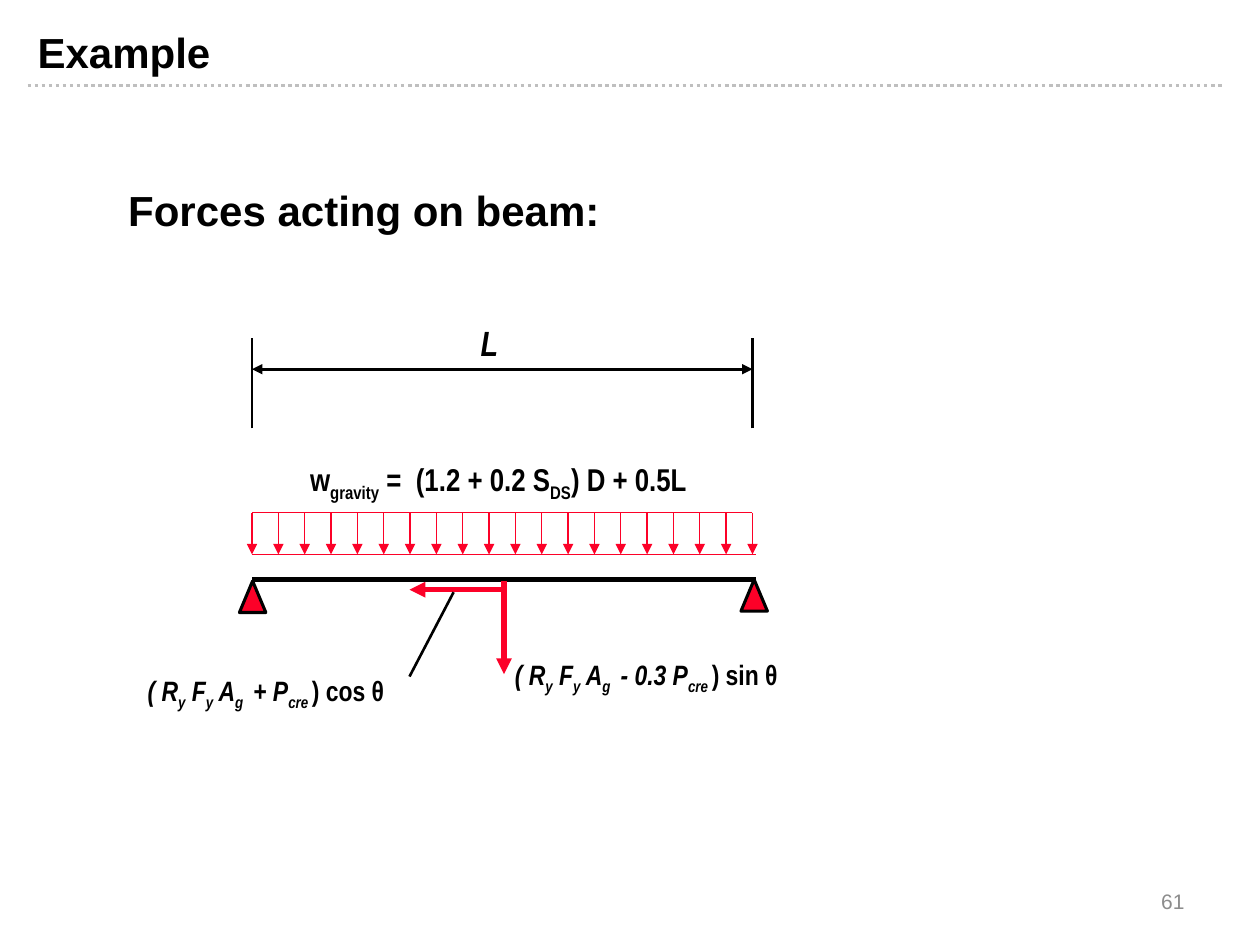
"""Build the slide showing the forces acting on a beam."""
from lxml import etree
from pptx import Presentation
from pptx.dml.color import RGBColor
from pptx.enum import dml, shapes, text
from pptx.oxml import ns
from pptx.util import Pt

THEME = {
    "black": "000000", "red": "FC0128", "rule": "BFBFBF", "number": "8C8C8C",
    "sans": "Arial", "narrow": "Arial Narrow",
    "heading": 24, "span": 20, "load": 18, "force": 16, "page": 12,
}
LEFT, MIDDLE, RIGHT, BEAM_END = 144, 288, 430, 432
LOAD_TOP, LOAD_BOTTOM, BEAM_Y = 293, 316.8, 331.2
LOAD_ARROWS = 20
BOLD = {"bold": True}
ITALIC = {"bold": True, "italic": True}
CENTER, START, END = text.PP_ALIGN.CENTER, text.PP_ALIGN.LEFT, text.PP_ALIGN.RIGHT
TOP, CENTERED = text.MSO_ANCHOR.TOP, text.MSO_ANCHOR.MIDDLE


def force_runs(term, function):
    """List the runs of one brace force component."""
    return [("( R", 0), ("y", 1), (" F", 0), ("y", 1), (" A", 0), ("g ", 1),
            (term, 0), ("cre ", 1), (f") {function} θ", 0, BOLD)]


LOAD_RUNS = [("w", 0), ("gravity", 1), (" =  (1.2 + 0.2 S", 0), ("DS", 1), (") D + 0.5L", 0)]

# box, runs, font, size, colour, style, alignment, anchor
TEXTS = [
    ((162, 259.2, 245.5, 28.8), LOAD_RUNS, "narrow", "load", "black", BOLD, CENTER, TOP),
    ((259.2, 180, 41, 31), [("L", 0)], "narrow", "span", "black", ITALIC, CENTER, TOP),
    ((264.2, 372.2, 210.2, 26.6), force_runs(" - 0.3 P", "sin"),
     "narrow", "force", "black", ITALIC, CENTER, TOP),
    ((46.8, 381.6, 210.2, 26.6), force_runs(" + P", "cos"),
     "narrow", "force", "black", ITALIC, CENTER, TOP),
    ((66.2, 102.2, 303.8, 36), [("Forces acting on beam:", 0)],
     "sans", "heading", "black", BOLD, START, TOP),
    ((14.4, 11.5, 646.6, 31.7), [("Example", 0)], "sans", "heading", "black", BOLD, START, TOP),
    ((516.2, 500.4, 167.8, 28.8), [("61", 0)], "sans", "page", "number", {}, END, CENTERED),
]

# start, end, colour, width, arrowheads
BEAM_LINES = [
    ((LEFT, BEAM_Y), (MIDDLE, BEAM_Y), "black", 3, ()),
    ((MIDDLE, BEAM_Y), (BEAM_END, BEAM_Y), "black", 3, ()),
]
SPAN_LINES = [
    ((RIGHT, 244.8), (RIGHT, 193), "black", 1.5, ()),
    ((LEFT, 244.8), (LEFT, 193), "black", 1.5, ()),
    ((LEFT, 211), (RIGHT, 211), "black", 1.5, ("headEnd", "tailEnd")),
]
FORCE_LINES = [
    ((MIDDLE, 332), (MIDDLE, 385.2), "red", 3, ("tailEnd",)),
    ((287.3, 337), (234, 337), "red", 3, ("tailEnd",)),
    ((234, 386.6), (259.2, 338.4), "black", 1.5, ()),
]
SUPPORTS = [(136.8, 332), (423.4, 331.2)]
SUPPORT_SIZE = (15.1, 18)


def colour(name):
    """Return a theme colour."""
    return RGBColor.from_string(THEME[name])


def apply(target, values):
    """Set each named attribute on the target."""
    for name, value in values.items():
        setattr(target, name, value)


def add_line(parent, start, end, line_colour, width, arrowheads):
    """Draw a straight line with optional arrowheads."""
    connector = parent.add_connector(
        shapes.MSO_CONNECTOR.STRAIGHT, *(Pt(value) for value in start + end))
    connector.line.color.rgb = colour(line_colour)
    connector.line.width = Pt(width)
    outline = connector.line._get_or_add_ln()
    for arrowhead in arrowheads:
        etree.SubElement(outline, ns.qn(f"a:{arrowhead}"), type="triangle")
    etree.SubElement(connector._element.spPr, ns.qn("a:effectLst"))
    return connector


def add_load(slide):
    """Draw the distributed load as a group of evenly spaced arrows."""
    group = slide.shapes.add_group_shape().shapes
    gap = (RIGHT - LEFT) / (LOAD_ARROWS - 1)
    for index in range(LOAD_ARROWS):
        x = LEFT + index * gap
        add_line(group, (x, LOAD_TOP), (x, LOAD_BOTTOM), "red", 0.75, ("tailEnd",))
    for y, end in ((LOAD_TOP, RIGHT), (LOAD_BOTTOM, BEAM_END)):
        add_line(group, (LEFT, y), (end, y), "red", 0.75, ())


def add_support(slide, position):
    """Draw one triangular support."""
    shape = slide.shapes.add_shape(
        shapes.MSO_SHAPE.ISOSCELES_TRIANGLE, *(Pt(value) for value in position + SUPPORT_SIZE))
    shape.shadow.inherit = False
    shape.fill.solid()
    shape.fill.fore_color.rgb = colour("red")
    shape.line.color.rgb = colour("black")
    shape.line.width = Pt(1.75)


def add_text(slide, box, runs, font, size, text_colour, style, alignment, anchor):
    """Write one paragraph whose runs may be subscripts."""
    frame = slide.shapes.add_textbox(*(Pt(value) for value in box)).text_frame
    apply(frame, {"word_wrap": True, "vertical_anchor": anchor})
    paragraph = frame.paragraphs[0]
    paragraph.alignment = alignment
    for wording, subscript, *override in runs:
        run = paragraph.add_run()
        run.text = wording
        run_style = override[0] if override else style
        apply(run.font, {"name": THEME[font], "size": Pt(THEME[size]), **run_style})
        run.font.color.rgb = colour(text_colour)
        if subscript:
            run.font._element.set("baseline", "-25000")


def main():
    """Assemble and save the slide."""
    presentation = Presentation()
    apply(presentation, {"slide_width": Pt(720), "slide_height": Pt(540)})
    slide = presentation.slides.add_slide(presentation.slide_layouts[6])
    rule = add_line(slide.shapes, (15.8, 49), (699.8, 49), "rule", 2, ())
    rule.line.dash_style = dml.MSO_LINE.ROUND_DOT
    for line in BEAM_LINES:
        add_line(slide.shapes, *line)
    add_load(slide)
    for line in SPAN_LINES:
        add_line(slide.shapes, *line)
    for position in SUPPORTS:
        add_support(slide, position)
    for line in FORCE_LINES:
        add_line(slide.shapes, *line)
    for entry in TEXTS:
        add_text(slide, *entry)
    presentation.save("out.pptx")


if __name__ == "__main__":
    main()
